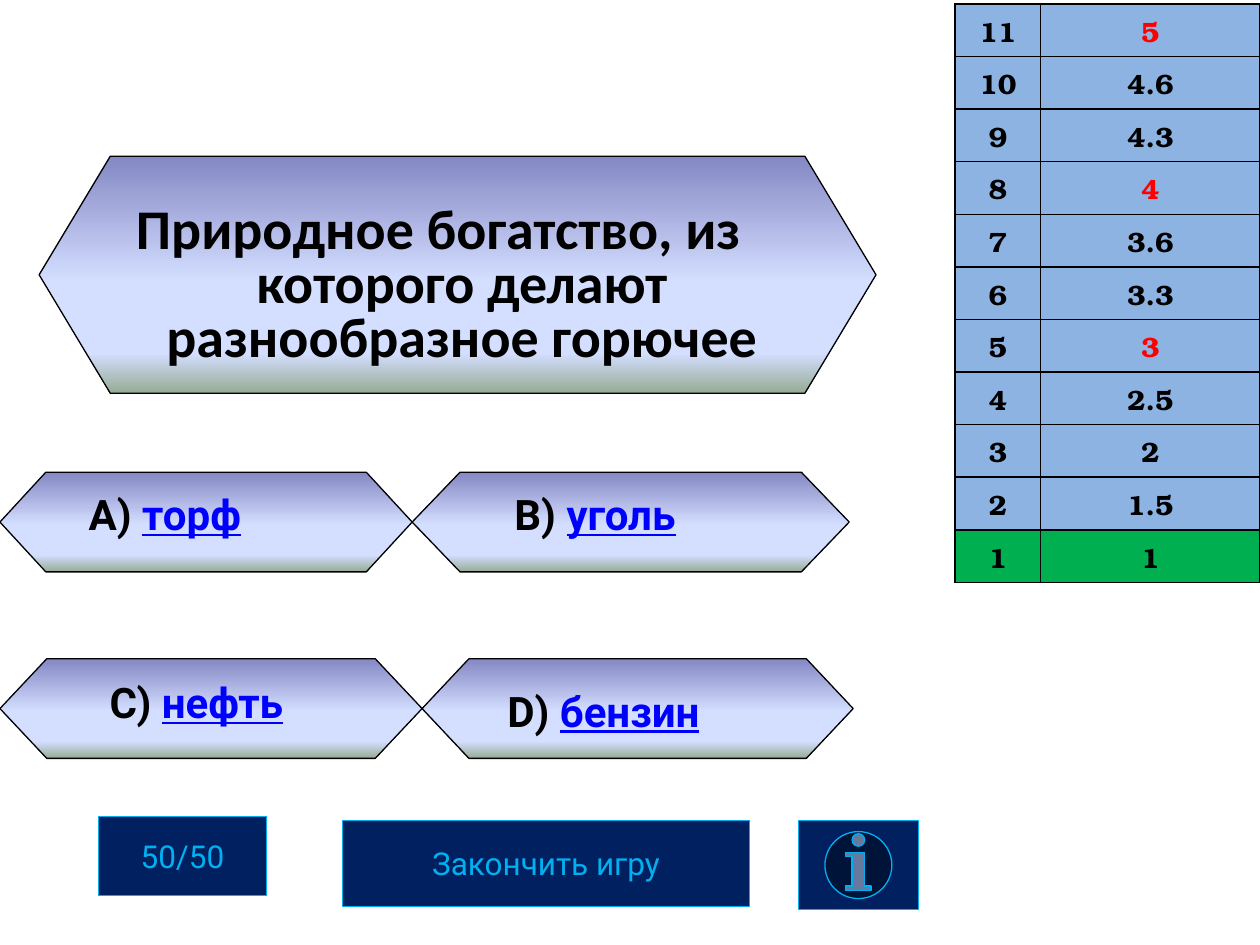
from copy import deepcopy

from lxml import etree
from pptx import Presentation
from pptx.dml.color import RGBColor
from pptx.enum import shapes, text
from pptx.oxml.ns import qn
from pptx.util import Cm, Pt

BLACK, LINK, RED, SKY, NAVY = "000000", "0000FF", "FF0000", "00B0F0", "002060"
ROW_BLUE, ROW_GREEN = "8DB3E2", "00B050"
GRADIENT = [(0, "8488C4"), (0.53, "D4DEFF"), (0.83, "D4DEFF"), (1, "96AB94")]


def rgb(value):
    return RGBColor.from_string(value)


def add_outlined(kind, box, line_color):
    shape = slide.shapes.add_shape(kind, *map(Cm, box))
    shape.shadow.inherit = False
    shape.line.color.rgb = rgb(line_color)
    shape.line.width = Pt(0.75)
    return shape


prs = Presentation()
prs.slide_width, prs.slide_height = Cm(25.4), Cm(19.05)
slide = prs.slides.add_slide(prs.slide_layouts[1])
slide.shapes.title.element.getparent().remove(slide.shapes.title.element)
question = slide.placeholders[1]

# Hexagon panels: the question and four answers
panels = [
    ((8.51, 13.28, 8.69, 2.01), 0.47),
    ((0, 13.28, 8.51, 2.01), 0.47),
    ((8.31, 9.52, 8.81, 2.01), 0.48),
    ((0, 9.52, 8.31, 2.01), 0.46),
    ((0.79, 3.15, 16.87, 4.78), 0.3),
]
for box, slant in panels:
    panel = add_outlined(shapes.MSO_SHAPE.HEXAGON, box, BLACK)
    panel.adjustments[0] = slant
    panel.fill.gradient()
    panel.fill.gradient_angle = 270
    stop_list = panel.element.spPr.find(".//" + qn("a:gsLst"))
    for _ in GRADIENT[2:]:
        stop_list.append(deepcopy(stop_list[0]))
    for stop, (position, color) in zip(panel.fill.gradient_stops, GRADIENT):
        stop.position = position
        stop.color.rgb = rgb(color)

# Question, brought in front of its panel
slide.shapes._spTree.append(question.element)
question.left, question.top = Cm(1.4), Cm(4.04)
question.width, question.height = Cm(14.88), Cm(4.29)
question.text_frame.text = "Природное богатство, из которого делают разнообразное горючее"
question.text_frame.auto_size = text.MSO_AUTO_SIZE.NONE
question.text_frame.vertical_anchor = text.MSO_ANCHOR.TOP
wording = question.text_frame.paragraphs[0]
wording.alignment = text.PP_ALIGN.CENTER
wording.line_spacing = 0.8
wording.space_before = Pt(0)
wording.font.name, wording.font.size, wording.font.bold = "Calibri", Pt(32), True
wording.font.color.rgb = rgb(BLACK)
properties = wording._p.get_or_add_pPr()
properties.set("marL", str(Cm(0.95)))
properties.set("indent", str(Cm(-0.95)))
etree.SubElement(properties, qn("a:buNone"))

# Answers
answers = [
    ("А) ", "торф", (0, 9.73, 6.65, 1.27)),
    ("В) ", "уголь", (8.31, 9.73, 7.37, 1.27)),
    ("С) ", "нефть", (0, 13.51, 7.92, 1.27)),
    ("D) ", "бензин", (8.89, 13.69, 6.55, 1.27)),
]
for letter, word, box in answers:
    frame = slide.shapes.add_textbox(*map(Cm, box)).text_frame
    frame.word_wrap = True
    frame.auto_size = text.MSO_AUTO_SIZE.SHAPE_TO_FIT_TEXT
    answer = frame.paragraphs[0]
    answer.alignment = text.PP_ALIGN.CENTER
    answer.font.name, answer.font.size, answer.font.bold = "Roboto", Pt(24), True
    for part, color in ((letter, BLACK), (word, LINK)):
        run = answer.add_run()
        run.text = part
        run.font.color.rgb = rgb(color)
    run.font.underline = True

# Buttons
buttons = [
    (shapes.MSO_SHAPE.ACTION_BUTTON_CUSTOM, "Закончить игру", (6.91, 16.54, 8.2, 1.73)),
    (shapes.MSO_SHAPE.ACTION_BUTTON_CUSTOM, "50/50", (1.98, 16.46, 3.4, 1.6)),
    (shapes.MSO_SHAPE.ACTION_BUTTON_INFORMATION, "", (16.1, 16.54, 2.41, 1.8)),
]
for kind, label, box in buttons:
    button = add_outlined(kind, box, SKY)
    button.fill.solid()
    button.fill.fore_color.rgb = rgb(NAVY)
    if label:
        button.text_frame.text = label
        button.text_frame.word_wrap = False
        button.text_frame.vertical_anchor = text.MSO_ANCHOR.MIDDLE
        caption = button.text_frame.paragraphs[0]
        caption.alignment = text.PP_ALIGN.CENTER
        caption.font.name, caption.font.size = "Roboto", Pt(18)
        caption.font.color.rgb = rgb(SKY)

# Score ladder, from the top level down to the current one
scores = ["5", "4.6", "4.3", "4", "3.6", "3.3", "3", "2.5", "2", "1.5", "1"]
milestones = {"5", "4", "3"}
levels = len(scores)
ladder = slide.shapes.add_table(
    levels, 2, Cm(19.25), Cm(0.08), Cm(6.15), Cm(1.06 * levels)).table
ladder.columns[0].width, ladder.columns[1].width = Cm(1.73), Cm(4.42)
for row, score in enumerate(scores):
    level = levels - row
    score_color = RED if score in milestones else BLACK
    for column, (value, color) in enumerate(((str(level), BLACK), (score, score_color))):
        cell = ladder.cell(row, column)
        cell.text = value
        cell.margin_left = cell.margin_right = Cm(0.18)
        cell.margin_top = cell.margin_bottom = 0
        entry = cell.text_frame.paragraphs[0]
        entry.alignment = text.PP_ALIGN.CENTER
        entry.line_spacing = 1.15
        entry.space_after = Pt(10)
        entry.font.name, entry.font.size, entry.font.bold = "TeX Gyre Bonum", Pt(16), True
        entry.font.color.rgb = rgb(color)
        borders = cell._tc.get_or_add_tcPr()
        for side in ("a:lnL", "a:lnR", "a:lnT", "a:lnB"):
            border = etree.SubElement(borders, qn(side), w=str(Pt(1)))
            paint = etree.SubElement(border, qn("a:solidFill"))
            etree.SubElement(paint, qn("a:srgbClr"), val=BLACK)
        cell.fill.solid()
        cell.fill.fore_color.rgb = rgb(ROW_GREEN if level == 1 else ROW_BLUE)

prs.save("out.pptx")
